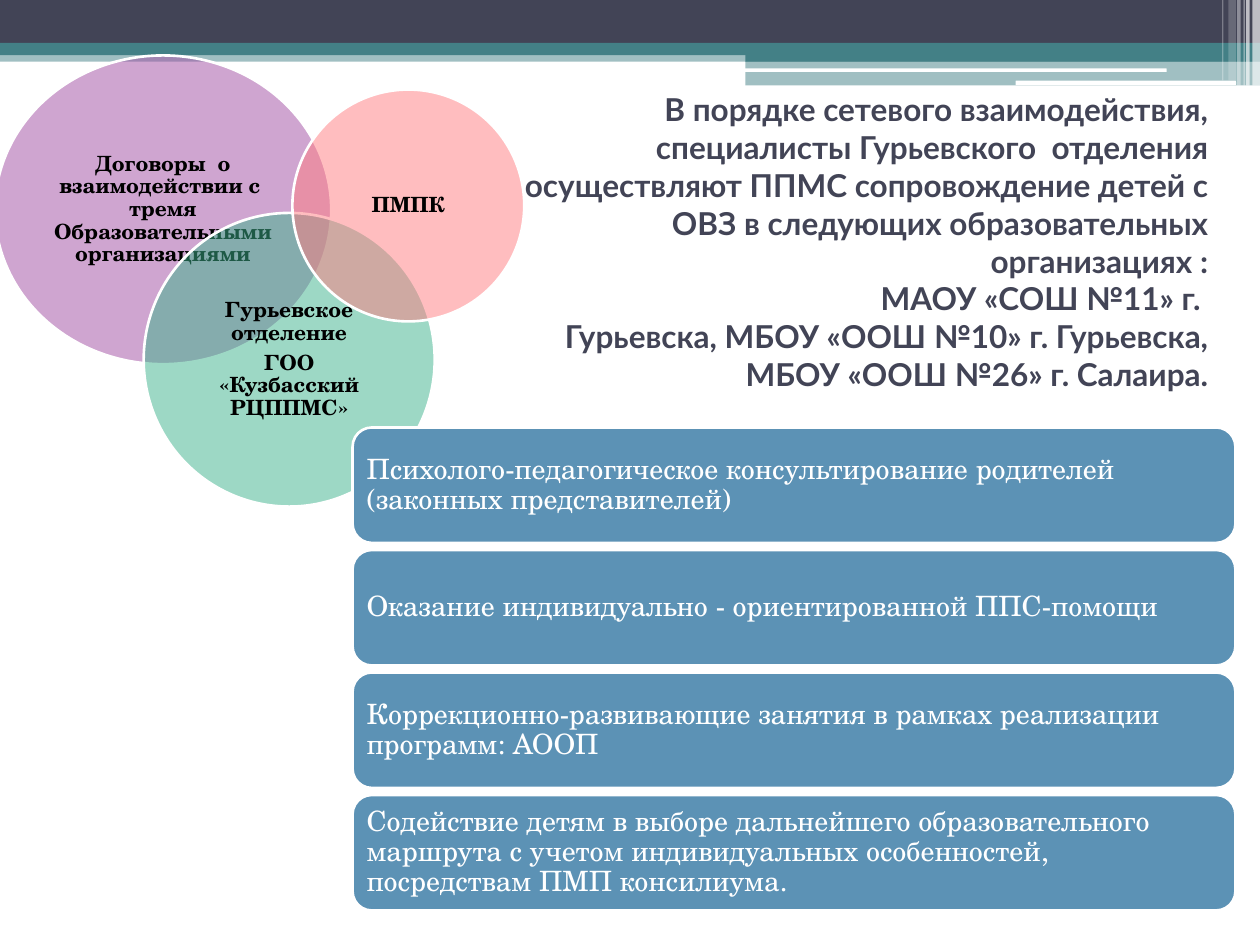
from lxml import etree
from pptx import Presentation
from pptx.dml.color import RGBColor
from pptx.enum.shapes import MSO_SHAPE as Shape
from pptx.enum.text import MSO_ANCHOR as Anchor, PP_ALIGN as Align
from pptx.oxml.ns import qn
from pptx.util import Pt

COLORS = {
    "navy": "424456", "teal": "438086", "white": "FFFFFF", "black": "000000",
    "purple": "A04DA3", "green": "3DB38C", "pink": "FF7C80", "blue": "5C92B5",
}
HEADING_FONT = "Lato"
BODY_FONT = "TeX Gyre Schola"

TITLE = (
    "В порядке сетевого взаимодействия, специалисты Гурьевского  отделения "
    "осуществляют ППМС сопровождение детей с ОВЗ в следующих образовательных "
    "организациях :\vМАОУ «СОШ №11» г. \vГурьевска, МБОУ «ООШ №10» г. "
    "Гурьевска, МБОУ «ООШ №26» г. Салаира."
)
# left, top, width, height inside the diagram, colour, text
CIRCLES = [
    (0, 0, 192.2, 176.4, "purple",
     "Договоры  о взаимодействии с  тремя Образовательными организациями"),
    (85, 90, 166.3, 167.8, "green",
     "Гурьевское отделение\nГОО «Кузбасский РЦППМС»"),
    (170, 19.5, 132.5, 132.5, "pink", "ПМПК"),
]
SERVICES = [
    "Психолого-педагогическое консультирование родителей (законных представителей)",
    "Оказание индивидуально - ориентированной ППС-помощи",
    "Коррекционно-развивающие занятия в рамках реализации программ: АООП",
    "Содействие детям в выборе дальнейшего образовательного маршрута с учетом "
    "индивидуальных особенностей,  посредствам ПМП консилиума.",
]
# left, top, width, height, colour, opacity in percent
BANDS = [
    (0, 28.8, 720, 6.5, "teal", 50),
    (0, 0, 720, 24.5, "navy", 100),
    (0, 24.5, 720, 7, "teal", 100),
    (426, 28.1, 294, 7.2, "teal", 100),
    (426, 34.9, 294, 14, "teal", 50),
]
RULES = [(425.5, 39.1, 241.2, 2), (580.3, 46.1, 126, 2.6)]
# left, width, height, opacity in percent
STRIPES = [
    (715.7, 4.3, 49, 65), (712.1, 2, 49, 65), (710.6, 0.7, 49, 60),
    (707, 2, 49, 40), (702, 4.3, 46, 20), (698.4, 0.7, 46, 30),
]


def rgb(name):
    return RGBColor.from_string(COLORS[name])


def add_filled(slide, kind, box, color, opacity=100, outline=False):
    shape = slide.shapes.add_shape(kind, *(Pt(value) for value in box))
    shape.shadow.inherit = False
    shape.fill.solid()
    shape.fill.fore_color.rgb = rgb(color)
    if opacity < 100:
        color_element = shape.fill._xPr.find(qn("a:solidFill"))[0]
        etree.SubElement(color_element, qn("a:alpha"), val=str(opacity * 1000))
    if outline:
        shape.line.color.rgb = rgb("white")
        shape.line.width = Pt(1.5)
    else:
        shape.line.fill.background()
    return shape


def write(shape, text, font, size, color, bold, align, anchor, margins):
    frame = shape.text_frame
    frame.word_wrap = True
    frame.vertical_anchor = anchor
    frame.margin_left = frame.margin_right = Pt(margins[0])
    frame.margin_top = frame.margin_bottom = Pt(margins[1])
    frame.text = text
    for paragraph in frame.paragraphs:
        paragraph.alignment = align
        for run in paragraph.runs:
            run.font.name = font
            run.font.size = Pt(size)
            run.font.bold = bold
            run.font.color.rgb = rgb(color)
    return frame.paragraphs


def write_label(shape, text, size, color, bold, align, margin):
    paragraphs = write(shape, text, BODY_FONT, size, color, bold, align,
                       Anchor.MIDDLE, (margin, margin))
    for paragraph in paragraphs:
        paragraph.line_spacing = 0.9
        paragraph.space_after = Pt(0.35 * size)


def add_header(slide, left, top):
    for x, y, width, height, color, opacity in BANDS:
        add_filled(slide, Shape.RECTANGLE, (left + x, top + y, width, height),
                   color, opacity)
    for x, y, width, height in RULES:
        add_filled(slide, Shape.ROUNDED_RECTANGLE,
                   (left + x, top + y, width, height), "white")
    for x, width, height, opacity in STRIPES:
        add_filled(slide, Shape.RECTANGLE, (left + x, top, width, height),
                   "white", opacity)


def add_title(slide, left, top, width, height):
    box = slide.shapes.add_textbox(Pt(left), Pt(top), Pt(width), Pt(height))
    write(box, TITLE, HEADING_FONT, 18, "navy", True, Align.RIGHT,
          Anchor.BOTTOM, (7.2, 3.6))


def add_circles(slide, left, top):
    for x, y, width, height, color, text in CIRCLES:
        circle = add_filled(slide, Shape.OVAL, (left + x, top + y, width, height),
                            color, 50, outline=True)
        write_label(circle, text, 12, "black", True, Align.CENTER, 3.6)


def add_services(slide, left, top, width, height, gap=4):
    bar_height = (height - gap * (len(SERVICES) - 1)) / len(SERVICES)
    for index, text in enumerate(SERVICES):
        box = (left, top + index * (bar_height + gap), width, bar_height)
        bar = add_filled(slide, Shape.ROUNDED_RECTANGLE, box, "blue", outline=True)
        write_label(bar, text, 16, "white", False, Align.LEFT, 4.8)


def main():
    presentation = Presentation()
    presentation.slide_width = Pt(720)
    presentation.slide_height = Pt(540)
    slide = presentation.slides.add_slide(presentation.slide_layouts[6])
    add_header(slide, 0, 0)
    add_title(slide, 263.5, 48, 434, 180)
    add_circles(slide, -2.9, 31.7)
    add_services(slide, 201.5, 244.3, 504.5, 276)
    presentation.save("out.pptx")


if __name__ == "__main__":
    main()
